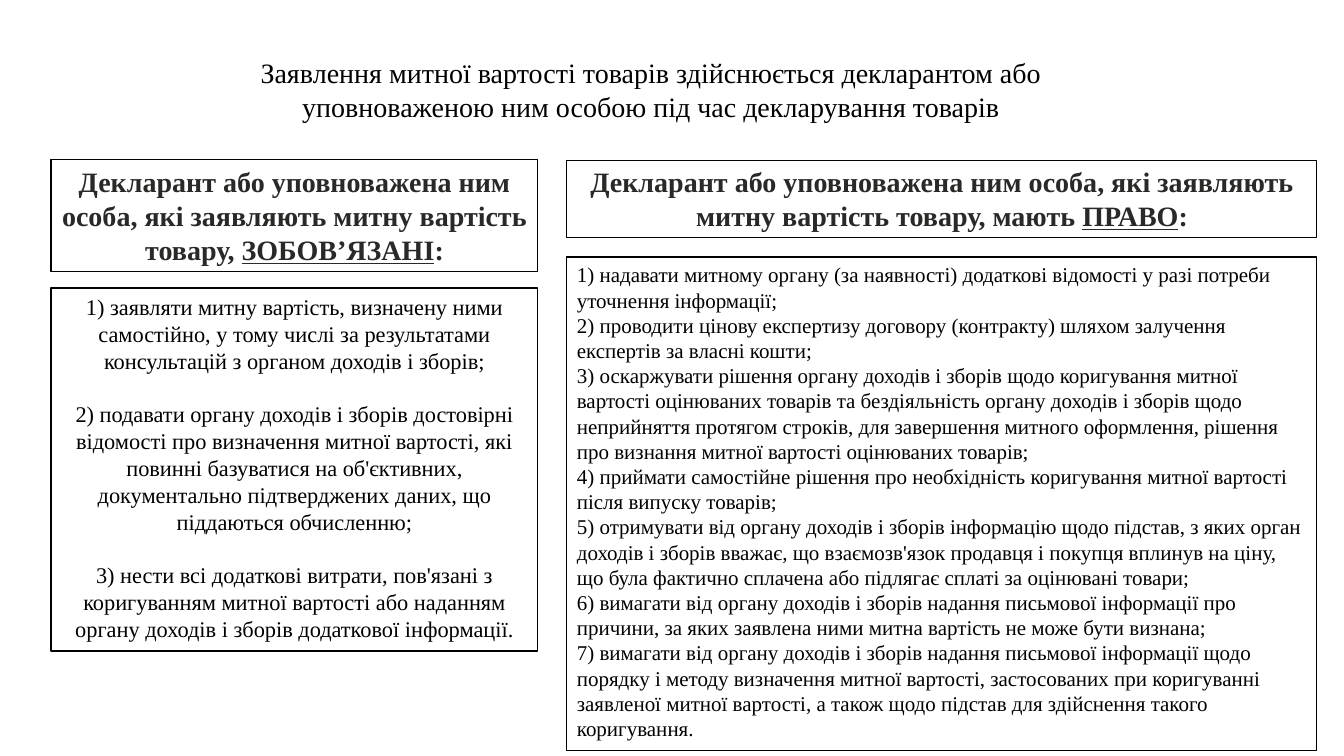
from pptx import Presentation
from pptx import util as u
from pptx.dml.color import RGBColor
from pptx.enum import shapes, text

PX = 9071
THEME = {
    "font": "Times New Roman",
    "ink": RGBColor(0x00, 0x00, 0x00),
    "heading_ink": RGBColor(0x2A, 0x29, 0x28),
    "heading": 20,
    "duty": 16,
    "right": 15,
}
CENTER = text.PP_ALIGN.CENTER
LEFT = text.PP_ALIGN.LEFT

deck = Presentation()
deck.slide_width, deck.slide_height = 1344 * PX, 756 * PX
page = deck.slides.add_slide(deck.slide_layouts[6])


def add_text(frame, paragraphs, size, color=THEME["ink"], bold=False, align=CENTER, gap=0):
    frame.word_wrap = True
    frame.auto_size = text.MSO_AUTO_SIZE.NONE
    frame.vertical_anchor = text.MSO_ANCHOR.TOP
    for index, spans in enumerate(paragraphs):
        para = frame.paragraphs[0] if index == 0 else frame.add_paragraph()
        para.alignment = align
        para.space_before = u.Pt(gap if index else 0)
        for words, underlined in spans:
            span = para.add_run()
            span.text = words
            span.font.name = THEME["font"]
            span.font.size = u.Pt(size)
            span.font.bold = bold
            span.font.underline = underlined
            span.font.color.rgb = color


def add_panel(left, top, width, height):
    box = page.shapes.add_shape(
        shapes.MSO_SHAPE.RECTANGLE, left * PX, top * PX, width * PX, height * PX)
    box.shadow.inherit = False
    box.fill.background()
    box.line.color.rgb = THEME["ink"]
    box.line.width = u.Pt(0.75)
    return box.text_frame


duties = [
    "1) заявляти митну вартість, визначену ними самостійно, у тому числі за результатами консультацій з органом доходів і зборів;",
    "2) подавати органу доходів і зборів достовірні відомості про визначення митної вартості, які повинні базуватися на об'єктивних, документально підтверджених даних, що піддаються обчисленню;",
    "3) нести всі додаткові витрати, пов'язані з коригуванням митної вартості або наданням органу доходів і зборів додаткової інформації.",
]
rights = [
    "1) надавати митному органу (за наявності) додаткові відомості у разі потреби уточнення інформації;",
    "2) проводити цінову експертизу договору (контракту) шляхом залучення експертів за власні кошти;",
    "3) оскаржувати рішення органу доходів і зборів щодо коригування митної вартості оцінюваних товарів та бездіяльність органу доходів і зборів щодо неприйняття протягом строків, для завершення митного оформлення, рішення про визнання митної вартості оцінюваних товарів;",
    "4) приймати самостійне рішення про необхідність коригування митної вартості після випуску товарів;",
    "5) отримувати від органу доходів і зборів інформацію щодо підстав, з яких орган доходів і зборів вважає, що взаємозв'язок продавця і покупця вплинув на ціну, що була фактично сплачена або підлягає сплаті за оцінювані товари;",
    "6) вимагати від органу доходів і зборів надання письмової інформації про причини, за яких заявлена ними митна вартість не може бути визнана;",
    "7) вимагати від органу доходів і зборів надання письмової інформації щодо порядку і методу визначення митної вартості, застосованих при коригуванні заявленої митної вартості, а також щодо підстав для здійснення такого коригування.",
]
opening = "Декларант або уповноважена ним особа, які заявляють митну вартість товару, "
columns = [
    dict(left=51, width=487, heading_height=112, lead=opening, key="ЗОБОВ’ЯЗАНІ",
         items=duties, top=288, height=363,
         style=dict(size=THEME["duty"], gap=19)),
    dict(left=567, width=750, heading_height=78, lead=opening + "мають ", key="ПРАВО",
         items=rights, top=257, height=494,
         style=dict(size=THEME["right"], align=LEFT)),
]

title = page.shapes.add_textbox(215 * PX, 51 * PX, 872 * PX, 78 * PX)
add_text(title.text_frame, [[(
    "Заявлення митної вартості товарів здійснюється декларантом або уповноваженою ним особою під час декларування товарів",
    False)]], THEME["heading"])

for column in columns:
    left, width = column["left"], column["width"]
    heading = add_panel(left, 160, width, column["heading_height"])
    add_text(heading, [[(column["lead"], False), (column["key"], True), (":", False)]],
             THEME["heading"], color=THEME["heading_ink"], bold=True)
    body = add_panel(left, column["top"], width, column["height"])
    add_text(body, [[(item, False)] for item in column["items"]], **column["style"])

deck.save("out.pptx")
